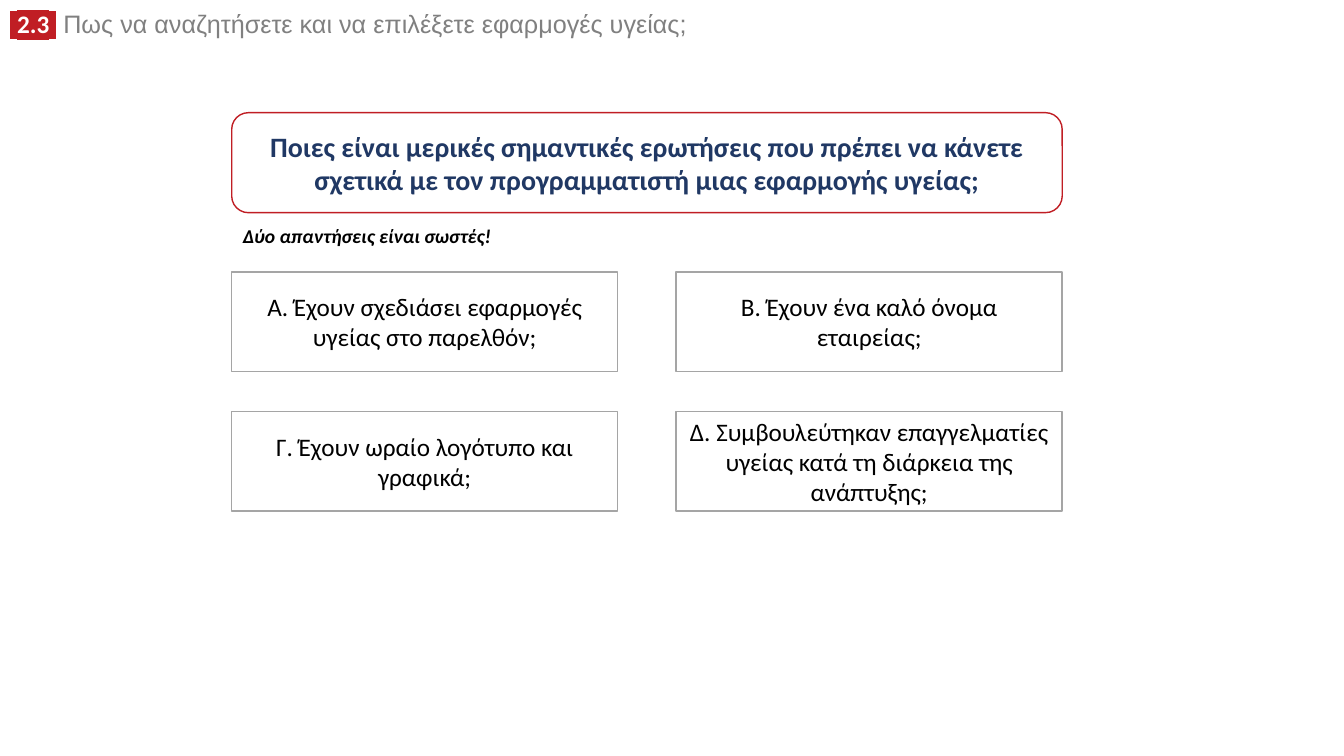
from dataclasses import dataclass

from lxml import etree
from pptx import Presentation
from pptx.dml.color import RGBColor
from pptx.enum.shapes import MSO_SHAPE
from pptx.enum.text import MSO_ANCHOR, MSO_AUTO_SIZE, PP_ALIGN
from pptx.oxml.ns import qn
from pptx.util import Cm, Pt

RECTANGLE, ROUNDED = MSO_SHAPE.RECTANGLE, MSO_SHAPE.ROUNDED_RECTANGLE
TOP, MIDDLE = MSO_ANCHOR.TOP, MSO_ANCHOR.MIDDLE
LEFT, CENTER = PP_ALIGN.LEFT, PP_ALIGN.CENTER
NO_FIT = MSO_AUTO_SIZE.NONE
TITLE_ONLY = 5


@dataclass(frozen=True)
class Theme:
    """Colours, fonts and type sizes of the quiz."""
    red: str = "C01E24"
    navy: str = "203864"
    grey: str = "808080"
    border: str = "A5A5A5"
    white: str = "FFFFFF"
    black: str = "000000"
    heading_font: str = "Arial"
    body_font: str = "Calibri"
    question_size: int = 20
    text_size: int = 18
    note_size: int = 14


THEME = Theme()

ANSWERS = [
    "A. Έχουν σχεδιάσει εφαρμογές υγείας στο παρελθόν;",
    "B. Έχουν ένα καλό όνομα εταιρείας;",
    "Γ. Έχουν ωραίο λογότυπο και γραφικά;",
    "Δ. Συμβουλεύτηκαν επαγγελματίες υγείας κατά τη διάρκεια της ανάπτυξης;",
]


def add_text(paragraph, text, size=THEME.text_size, color=THEME.black,
             font=THEME.body_font, bold=False, italic=False, highlight=None):
    """Append one formatted run to a paragraph."""
    run = paragraph.add_run()
    run.text = text
    run.font.size = Pt(size)
    run.font.bold = bold
    run.font.italic = italic
    run.font.color.rgb = RGBColor.from_string(color)
    if highlight:
        marker = etree.SubElement(run.font._element, qn("a:highlight"))
        etree.SubElement(marker, qn("a:srgbClr"), val=highlight)
    run.font.name = font


def add_card(slide, box, kind, line_color, text, **text_format):
    """Draw an outlined white card with centred text."""
    shape = slide.shapes.add_shape(kind, *(Cm(length) for length in box))
    shape.shadow.inherit = False
    shape.fill.solid()
    shape.fill.fore_color.rgb = RGBColor.from_string(THEME.white)
    shape.line.color.rgb = RGBColor.from_string(line_color)
    shape.line.width = Pt(1)
    frame = shape.text_frame
    frame.word_wrap = True
    frame.vertical_anchor = MIDDLE
    frame.paragraphs[0].alignment = CENTER
    add_text(frame.paragraphs[0], text, **text_format)


def add_heading(slide, box, number, text):
    """Fill the title placeholder with a highlighted number and a heading."""
    title = slide.shapes.title
    title.left, title.top, title.width, title.height = (Cm(length) for length in box)
    frame = title.text_frame
    frame.auto_size = NO_FIT
    frame.vertical_anchor = TOP
    paragraph = frame.paragraphs[0]
    paragraph.alignment = LEFT
    paragraph.line_spacing = 0.8
    for part, font in ((" ", THEME.heading_font), (number, THEME.body_font),
                       (" ", THEME.heading_font)):
        add_text(paragraph, part, font=font, color=THEME.white, bold=True,
                 highlight=THEME.red)
    add_text(paragraph, " " + text, font=THEME.heading_font, color=THEME.grey)


def add_note(slide, box, text):
    """Write the hint between the question and its answers."""
    frame = slide.shapes.add_textbox(*(Cm(length) for length in box)).text_frame
    frame.word_wrap = False
    add_text(frame.paragraphs[0], text, size=THEME.note_size, bold=True, italic=True)


def add_answers(slide, box, answers, columns=2, gap_x=1.47, gap_y=1.0):
    """Lay the answers out in an even grid inside the box."""
    left, top, width, height = box
    rows = len(answers) // columns
    card_width = (width - gap_x * (columns - 1)) / columns
    card_height = (height - gap_y * (rows - 1)) / rows
    for index, answer in enumerate(answers):
        row, column = divmod(index, columns)
        card = (left + column * (card_width + gap_x),
                top + row * (card_height + gap_y), card_width, card_height)
        add_card(slide, card, RECTANGLE, THEME.border, answer)


def add_quiz(slide, box):
    """Stack the question, the hint and the answers inside the box."""
    left, top, width, height = box
    question_height, answers_offset = 2.52, 4.01
    add_card(slide, (left, top, width, question_height), ROUNDED, THEME.red,
             "Ποιες είναι μερικές σημαντικές ερωτήσεις που πρέπει να κάνετε "
             "σχετικά με τον προγραμματιστή μιας εφαρμογής υγείας;",
             size=THEME.question_size, color=THEME.navy, bold=True)
    add_note(slide, (left + 0.03, top + 2.67, 6.81, 0.86),
             "Δύο απαντήσεις είναι σωστές!")
    add_answers(slide, (left, top + answers_offset, width, height - answers_offset),
                ANSWERS)


def main():
    """Build and save the presentation."""
    presentation = Presentation()
    presentation.slide_width, presentation.slide_height = Cm(33.87), Cm(19.05)
    slide = presentation.slides.add_slide(presentation.slide_layouts[TITLE_ONLY])
    add_heading(slide, (0, 0.23, 24.18, 0.89), "2.3",
                "Πως να αναζητήσετε και να επιλέξετε εφαρμογές υγείας;")
    add_quiz(slide, (5.84, 2.84, 20.93, 10.04))
    presentation.save("out.pptx")


if __name__ == "__main__":
    main()
